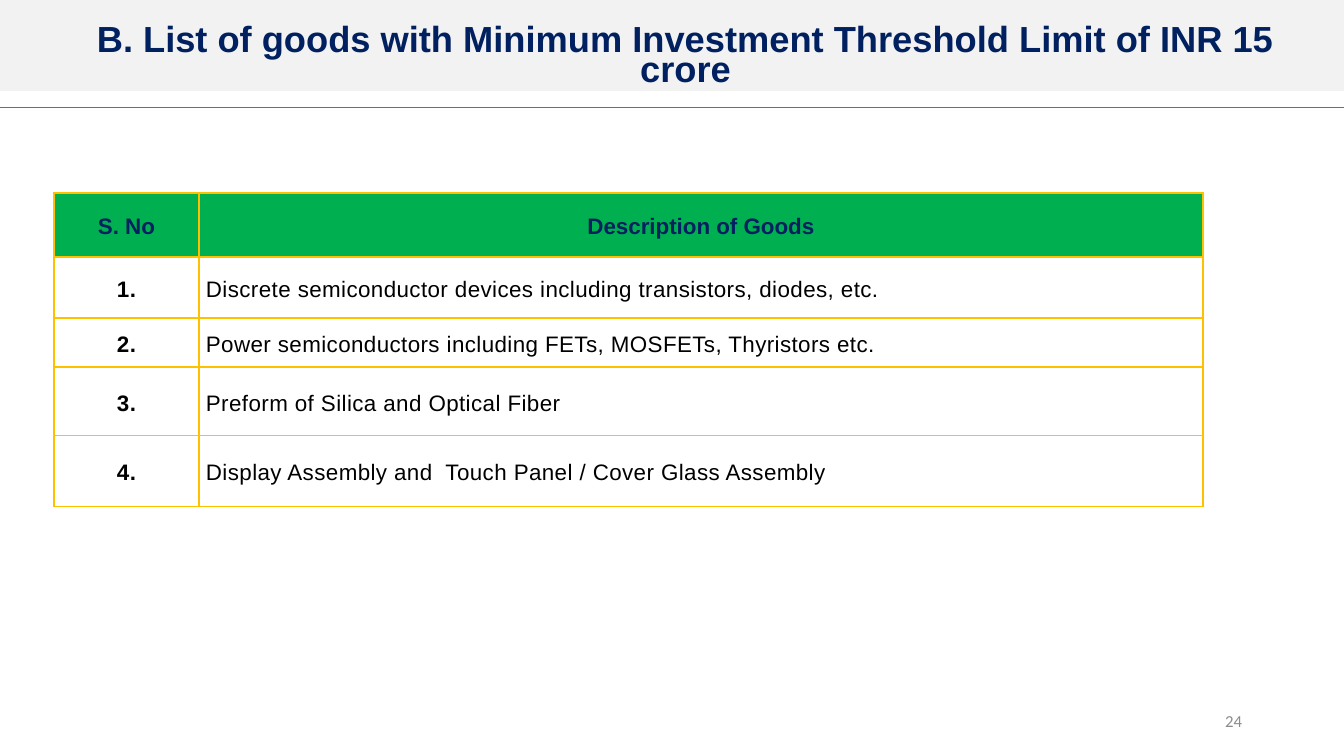
from dataclasses import dataclass
from lxml.etree import SubElement as Sub
from pptx import Presentation
from pptx.dml.color import RGBColor as RGB
from pptx.enum.shapes import MSO_CONNECTOR as Conn, MSO_SHAPE as Shape
from pptx.enum.text import MSO_ANCHOR as Anchor, PP_ALIGN as Align
from pptx.oxml.ns import qn
from pptx.util import Pt

# Content
TITLE = "B. List of goods with Minimum Investment Threshold Limit of INR 15 crore"
PAGE = "24"
HEADS = ("S. No", "Description of Goods")
GOODS = [
    "Discrete semiconductor devices including transistors, diodes, etc.",
    "Power semiconductors including FETs, MOSFETs, Thyristors etc.",
    "Preform of Silica and Optical Fiber",
    "Display Assembly and  Touch Panel / Cover Glass Assembly",
]

# Layout in px
WIDE, HIGH = 1344, 756
BAND, RULE = 91, 107
COLS = (145, 1004)
ROWS = (64, 61, 49, 69, 71)
PALE = 3  # row whose lower border is grey


@dataclass(frozen=True)
class Theme:
    font: str = "Arial"
    foot: str = "Calibri"
    navy: str = "002060"
    black: str = "000000"
    white: str = "FFFFFF"
    green: str = "00B050"
    gold: str = "FFC000"
    band: str = "F2F2F2"
    blue: str = "4472C4"
    grey: str = "8C8C8C"
    pale: str = "BFBFBF"
    title: float = 25.9
    cell: int = 16
    page: int = 12


T = Theme()


def px(n):
    return round(n * 914400 / 100.8)


def box(*nums):
    return [px(n) for n in nums]


def paint(fill, hue):
    fill.solid()
    fill.fore_color.rgb = RGB.from_string(hue)


def write(para, text, size, hue, align, bold=False, face=T.font, gap=None):
    para.alignment = align
    run = para.add_run()
    run.text = text
    font = run.font
    font.name, font.size, font.bold = face, Pt(size), bold
    font.color.rgb = RGB.from_string(hue)
    if gap:
        font._element.set("spc", str(gap))


def edge(cell, side, hue):
    line = Sub(cell._tc.get_or_add_tcPr(), qn(f"a:ln{side}"), w=str(Pt(1)))
    fill = Sub(line, qn("a:solidFill"))
    Sub(fill, qn("a:srgbClr"), val=hue)


def frame(slide):
    # Band and rule behind the title
    band = slide.shapes.add_shape(Shape.RECTANGLE, *box(0, 0, WIDE, BAND))
    band.shadow.inherit = False
    paint(band.fill, T.band)
    band.line.fill.background()
    rule = slide.shapes.add_connector(Conn.STRAIGHT, *box(0, RULE, WIDE, RULE))
    rule.line.color.rgb = RGB.from_string(T.blue)
    rule.line.width = Pt(0.5)
    Sub(rule._element.spPr, qn("a:effectLst"))


def head(slide):
    title = slide.shapes.title
    title.left, title.top, title.width, title.height = box(55, 19, 1261, 74)
    text = title.text_frame
    text.word_wrap, text.vertical_anchor = True, Anchor.BOTTOM
    text.margin_left = text.margin_right = px(7)
    text.margin_top = text.margin_bottom = px(4)
    para = text.paragraphs[0]
    para.line_spacing = 0.7
    write(para, TITLE, T.title, T.navy, Align.CENTER, True)
    # Bring the title above the band
    slide.shapes._spTree.append(title._element)


def grid(slide):
    data = [HEADS] + [(f"{i}.", good) for i, good in enumerate(GOODS, 1)]
    area = box(54, 193, sum(COLS), sum(ROWS))
    table = slide.shapes.add_table(len(ROWS), len(COLS), *area).table
    for col, wide in zip(table.columns, COLS):
        col.width = px(wide)
    for row, high in zip(table.rows, ROWS):
        row.height = px(high)
    for r, line in enumerate(data):
        for c, text in enumerate(line):
            cell = table.cell(r, c)
            top = r == 0
            for side in "LRTB":
                pale = (side, r) in (("B", PALE), ("T", PALE + 1))
                edge(cell, side, T.pale if pale else T.gold)
            paint(cell.fill, T.green if top else T.white)
            cell.vertical_anchor = Anchor.MIDDLE
            cell.margin_left = cell.margin_right = px(7)
            cell.margin_top = cell.margin_bottom = 0
            para = cell.text_frame.paragraphs[0]
            para.line_spacing = 1.15
            write(para, text, T.cell, T.navy if top else T.black,
                  Align.CENTER if top or c == 0 else Align.JUSTIFY,
                  top or c == 0, gap=None if top else 30)


def foot(slide):
    text = slide.shapes.add_textbox(*box(950, 701, 302, 40)).text_frame
    text.word_wrap, text.vertical_anchor = True, Anchor.MIDDLE
    write(text.paragraphs[0], PAGE, T.page, T.grey, Align.RIGHT, face=T.foot)


def main():
    deck = Presentation()
    deck.slide_width, deck.slide_height = box(WIDE, HIGH)
    slide = deck.slides.add_slide(deck.slide_layouts[5])
    paint(slide.background.fill, T.white)
    for part in (frame, grid, foot, head):
        part(slide)
    deck.save("out.pptx")


if __name__ == "__main__":
    main()
